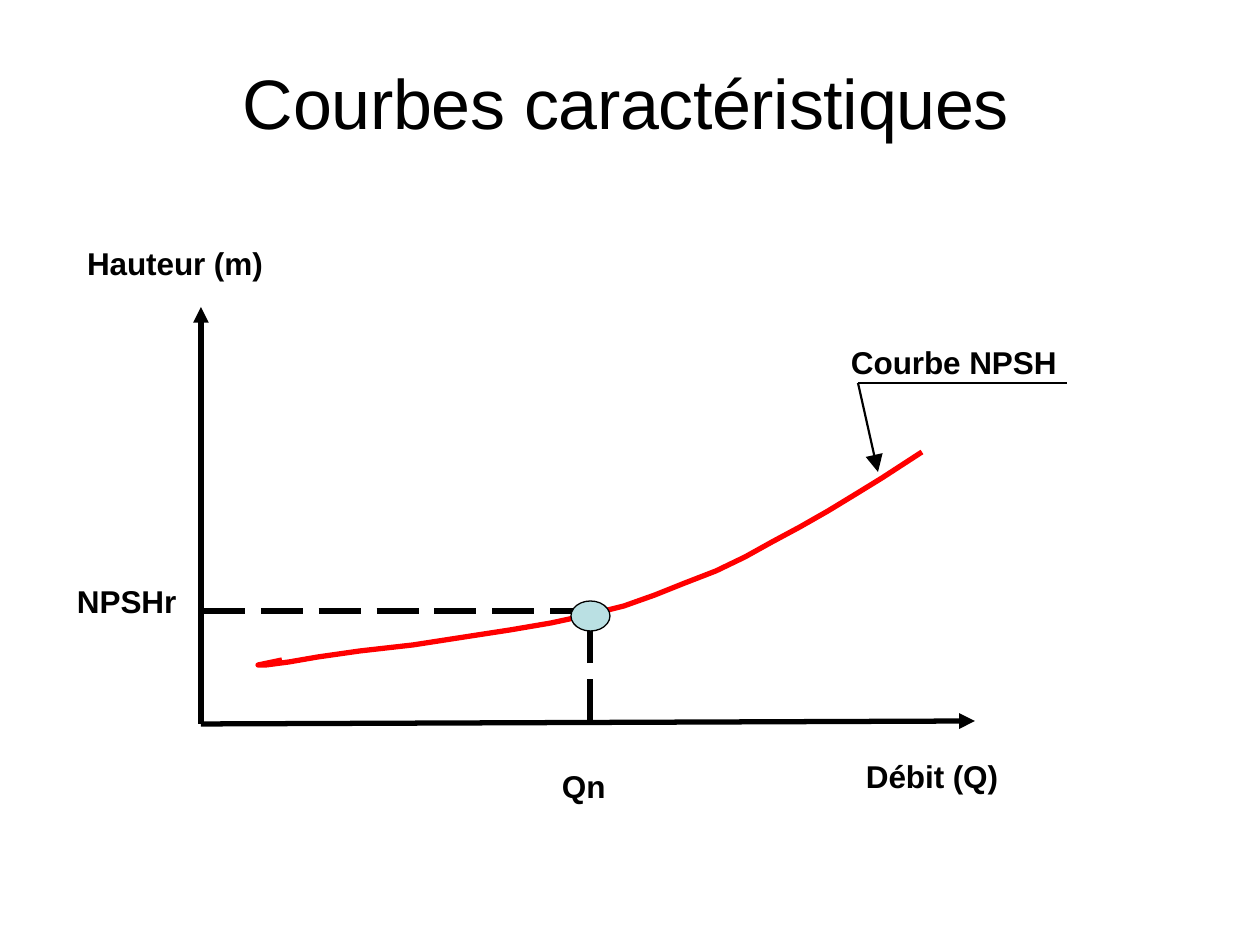
from lxml.etree import SubElement
from pptx import Presentation
from pptx.dml.color import RGBColor
from pptx.enum.dml import MSO_LINE
from pptx.enum.shapes import MSO_CONNECTOR, MSO_SHAPE
from pptx.enum.text import MSO_ANCHOR, PP_ALIGN
from pptx.oxml.ns import qn
from pptx.util import Pt

SCALE = 914400 / 126
BLACK = "000000"
CURVE = [
    (282, 660), (258, 665), (266, 665), (289, 662), (318, 657), (360, 651),
    (413, 645), (471, 636), (510, 630), (551, 623), (588, 615), (624, 606),
    (655, 595), (685, 583), (716, 571), (745, 557), (772, 542), (800, 527),
    (828, 511), (856, 494), (882, 478), (922, 452),
]
LABELS = [
    ("Hauteur (m)", 86, 244, 180),
    ("Débit (Q)", 865, 757, 136),
    ("Qn", 561, 767, 48),
    ("Courbe NPSH", 850, 343, 210),
    ("NPSHr", 76, 582, 103),
]


def px(*vals):
    """Turn pixel lengths into EMU."""
    return [round(v * SCALE) for v in vals]


def color(code):
    return RGBColor.from_string(code)


def write(frame, text, size, bold, track, left, top=0):
    """Fill a frame with one run; track is in hundredths of a point."""
    frame.word_wrap = True
    frame.vertical_anchor = MSO_ANCHOR.TOP
    frame.margin_left, frame.margin_top = px(left, top)
    frame.margin_right = frame.margin_bottom = 0
    para = frame.paragraphs[0]
    para.alignment = PP_ALIGN.LEFT
    run = para.add_run()
    run.text = text
    font = run.font
    font.name, font.size, font.bold = "Arial", Pt(size), bold
    font.color.rgb = color(BLACK)
    run._r.get_or_add_rPr().set("spc", str(track))


def add_title(slide, text):
    title = slide.shapes.title
    title.left, title.top, title.width, title.height = px(122, 30, 1016, 141)
    write(title.text_frame, text, 40, False, -20, 121, 29)


def add_label(slide, text, x, y, w):
    box = slide.shapes.add_textbox(*px(x, y, w, 35))
    write(box.text_frame, text, 18, True, -5, 1)


def add_line(slide, start, end, width, dash=None, head=None):
    """Draw a black line; head is the arrowhead size, if any."""
    line = slide.shapes.add_connector(
        MSO_CONNECTOR.STRAIGHT, *px(*start, *end))
    line.line.width = Pt(width)
    line.line.color.rgb = color(BLACK)
    if dash:
        line.line.dash_style = dash
    props = line._element.spPr
    if head:
        SubElement(props.find(qn("a:ln")), qn("a:tailEnd"),
                   type="triangle", w=head, len=head)
    SubElement(props, qn("a:effectLst"))


def add_curve(slide, points, code):
    path = slide.shapes.build_freeform(*points[0], scale=SCALE)
    path.add_line_segments(points[1:], close=False)
    curve = path.convert_to_shape()
    curve.shadow.inherit = False
    curve.fill.background()
    curve.line.color.rgb = color(code)
    curve.line.width = Pt(3)


def add_point(slide, x, y, w, h):
    point = slide.shapes.add_shape(MSO_SHAPE.OVAL, *px(x, y, w, h))
    point.shadow.inherit = False
    point.fill.solid()
    point.fill.fore_color.rgb = color("BAE0E3")
    point.line.color.rgb = color(BLACK)
    point.line.width = Pt(0.75)


def main():
    deck = Presentation()
    deck.slide_width, deck.slide_height = px(1260, 945)
    slide = deck.slides.add_slide(deck.slide_layouts[5])

    add_title(slide, "Courbes caractéristiques")
    add_line(slide, (201, 724), (975, 721), 3, head="med")
    add_line(slide, (201, 724), (201, 307), 3, head="med")
    add_curve(slide, CURVE, "FF0000")
    add_line(slide, (1067, 383), (858, 383), 0.75)
    add_line(slide, (858, 383), (878, 472), 1.25, head="lg")
    for end in ((590, 721), (203, 611)):
        add_line(slide, end, (590, 611), 3, dash=MSO_LINE.LONG_DASH)
    add_point(slide, 571, 601, 39, 30)
    for label in LABELS:
        add_label(slide, *label)

    deck.save("out.pptx")


if __name__ == "__main__":
    main()
